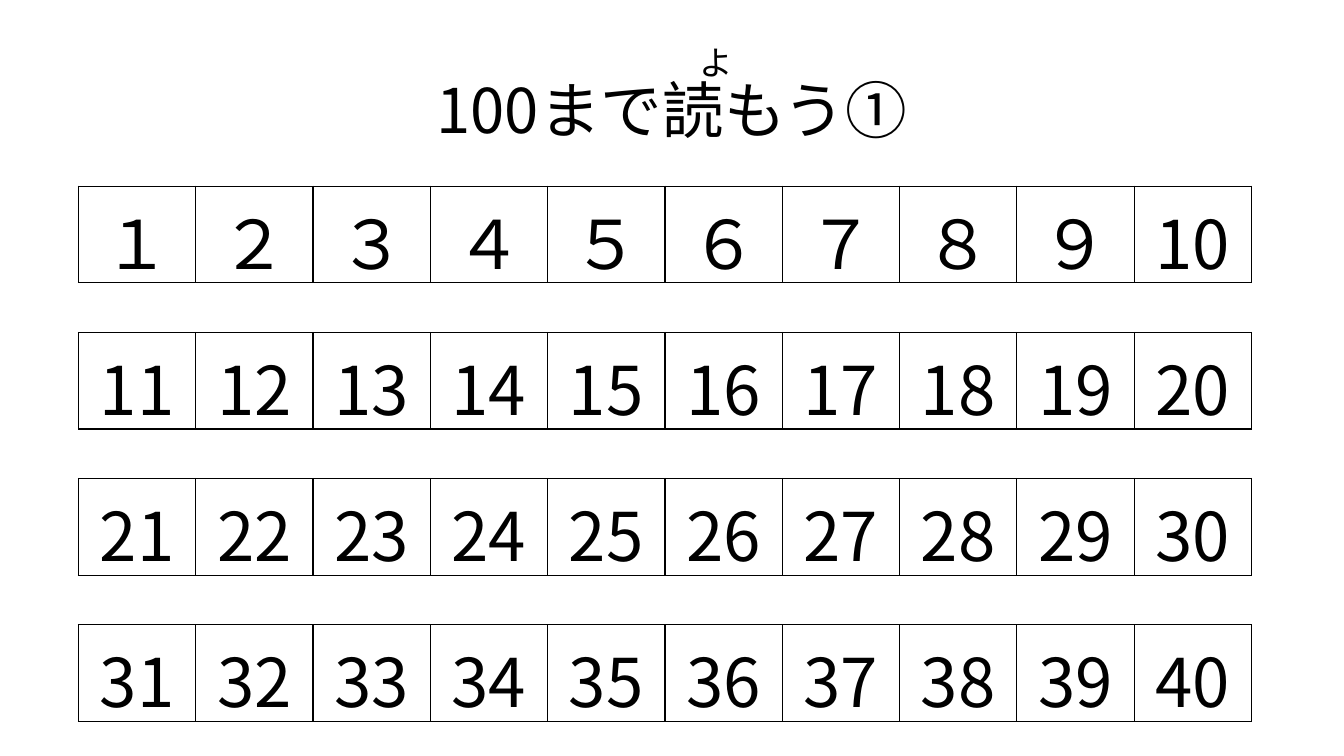
from dataclasses import dataclass

from lxml.etree import SubElement
from pptx import Presentation
from pptx.dml.color import RGBColor
from pptx.enum.text import MSO_ANCHOR as Anchor, MSO_AUTO_SIZE as AutoSize, PP_ALIGN as Align
from pptx.oxml import parse_xml
from pptx.oxml.ns import nsdecls, qn
from pptx.util import Pt


@dataclass
class Theme:
    font: str = "Noto Sans CJK JP"
    ink: str = "000000"
    title: int = 44
    number: int = 48
    reading: int = 24
    border: int = 1


theme = Theme()


def write(para, text, size, align):
    """Put text in a paragraph, with the same font for Latin and Japanese."""
    para.text = text
    para.alignment = align
    para.font.size = Pt(size)
    para.font.name = theme.font
    para.font.color.rgb = RGBColor.from_string(theme.ink)
    SubElement(para._p.pPr.find(qn("a:defRPr")), qn("a:ea"), typeface=theme.font)


def add_borders(cell):
    properties = cell._tc.get_or_add_tcPr()
    for index, side in enumerate(("lnL", "lnR", "lnT", "lnB")):
        properties.insert(index, parse_xml(
            f'<a:{side} {nsdecls("a")} w="{Pt(theme.border)}"><a:solidFill>'
            f'<a:srgbClr val="{theme.ink}"/></a:solidFill></a:{side}>'))


deck = Presentation()
deck.slide_width, deck.slide_height = Pt(960), Pt(540)
page = deck.slides.add_slide(deck.slide_layouts[6])

# Title
title = page.shapes.add_textbox(Pt(66), Pt(28.75), Pt(828), Pt(104.4)).text_frame
title.word_wrap = True
title.vertical_anchor = Anchor.MIDDLE
write(title.paragraphs[0], "100まで読もう①", theme.title, Align.CENTER)
title.paragraphs[0].line_spacing = 0.9

# Number strips: four tables of ten
columns, strips = 10, 4
left, top, pitch = 56, 133, 104.4
cell_width, cell_height = 83.8, 69
full_width = "１２３４５６７８９"

for strip in range(strips):
    table = page.shapes.add_table(
        1, columns, Pt(left), Pt(top + strip * pitch),
        Pt(columns * cell_width), Pt(cell_height)).table
    table.first_row = table.horz_banding = False
    for column in range(columns):
        table.columns[column].width = Pt(cell_width)
        number = strip * columns + column + 1
        label = full_width[number - 1] if number < 10 else str(number)
        cell = table.cell(0, column)
        cell.vertical_anchor = Anchor.MIDDLE
        cell.fill.background()
        add_borders(cell)
        write(cell.text_frame.paragraphs[0], label, theme.number, Align.CENTER)

# Reading above the kanji
reading = page.shapes.add_textbox(Pt(492.5), Pt(26.6), Pt(38.9), Pt(36)).text_frame
reading.word_wrap = False
reading.auto_size = AutoSize.SHAPE_TO_FIT_TEXT
write(reading.paragraphs[0], "よ", theme.reading, Align.LEFT)

deck.save("out.pptx")
